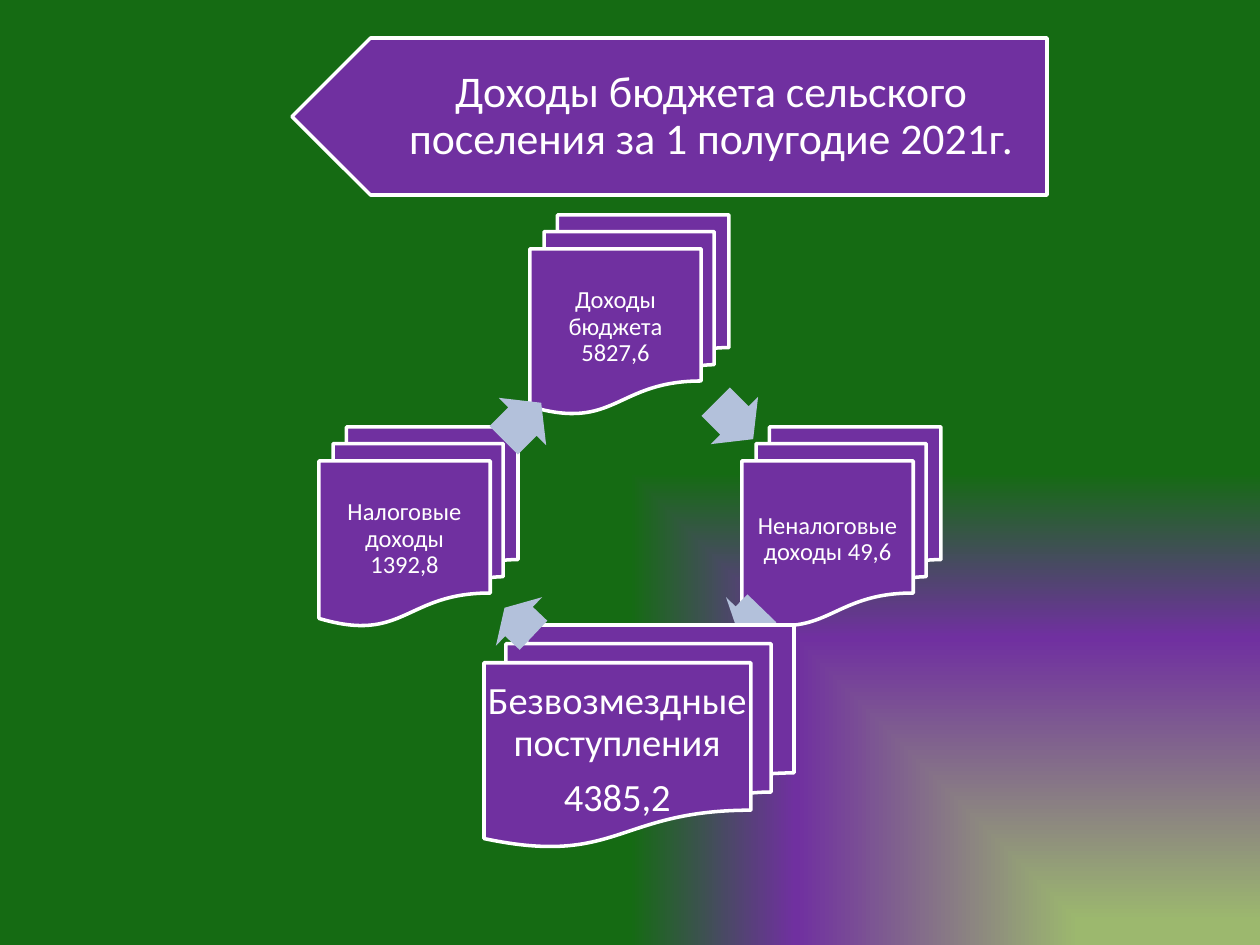
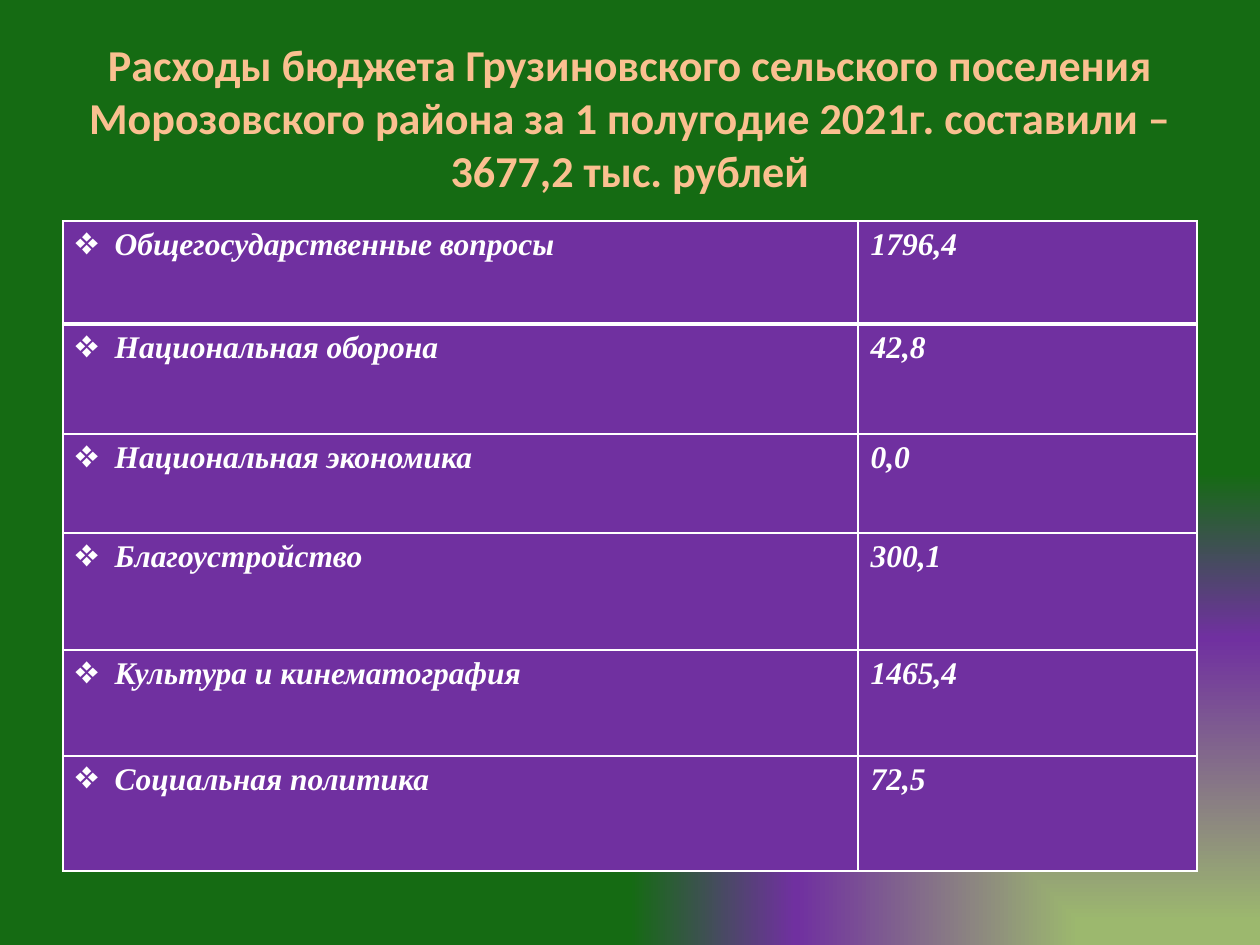
from pptx import Presentation
from pptx import util as u
from pptx.dml.color import RGBColor
from pptx.enum import shapes, text
from pptx.oxml import ns, parse_xml

PX = 914400 / 126
PURPLE, GREEN, LIME = "7030A0", "156B13", "9CB86E"
WHITE, PEACH, PALE_BLUE = "FFFFFF", "FAC090", "B3C1DB"
BACKGROUND_STOPS = [(5, LIME), (65, PURPLE), (100, GREEN)]

BANNER_TEXT = "Доходы бюджета сельского поселения за 1 полугодие 2021г."
BANNER = (292, 38, 755, 157)
BANNER_TEXT_BOX = (331, 38, 715, 157)

# Each card is followed by the arrow that leads to the next one.
INCOME_CYCLE = [
    {"lines": ["Доходы бюджета\v5827,6"], "size": 14,
     "card": (530, 215, 199, 199), "arrow": (708, 387, 53, 67), "turn": 45},
    {"lines": ["Неналоговые доходы 49,6"], "size": 14,
     "card": (742, 427, 199, 199), "arrow": (733, 587, 34, 67), "turn": 134.1},
    {"lines": ["Безвозмездные\vпоступления", "4385,2"], "size": 22,
     "card": (484, 625, 310, 222), "arrow": (499, 588, 40, 67), "turn": 223.5},
    {"lines": ["Налоговые доходы\v1392,8"], "size": 14,
     "card": (319, 427, 199, 199), "arrow": (496, 388, 53, 67), "turn": 315},
]
CARD_INSETS = (1, 3, 1, 3)

EXPENSES_TITLE = ("Расходы бюджета Грузиновского сельского поселения Морозовского "
                  "района за 1 полугодие 2021г. составили – 3677,2 тыс. рублей")
EXPENSES = [
    ("Общегосударственные вопросы", "1796,4"),
    ("Национальная оборона", "42,8"),
    ("Национальная экономика", "0,0"),
    ("Благоустройство", "300,1"),
    ("Культура и кинематография", "1465,4"),
    ("Социальная политика", "72,5"),
]
COLUMN_WIDTHS = [795, 339]
ROW_HEIGHTS = [103, 110, 99, 117, 106, 115]
TITLE_BOX = (63, 38, 1134, 157)
TABLE_CORNER = (63, 221)


def px(*lengths):
    return [u.Emu(round(length * PX)) for length in lengths]


def color(hex_code):
    return RGBColor.from_string(hex_code)


def set_font(paragraph, hex_code, **formats):
    for name, value in formats.items():
        setattr(paragraph.font, name, value)
    paragraph.font.color.rgb = color(hex_code)


def set_background(master):
    """Give every slide a gradient that spreads from the lower right corner."""
    master.background.fill.solid()
    properties = master.element.find(".//" + ns.qn("p:bgPr"))
    stops = "".join(f'<a:gs pos="{position * 1000}"><a:srgbClr val="{hex_code}"/></a:gs>'
                    for position, hex_code in BACKGROUND_STOPS)
    gradient = parse_xml(
        f'<a:gradFill {ns.nsdecls("a")} rotWithShape="1"><a:gsLst>{stops}</a:gsLst>'
        '<a:path path="rect"><a:fillToRect l="100000" t="100000"/></a:path></a:gradFill>')
    properties.replace(properties.find(ns.qn("a:solidFill")), gradient)


def add_block(slide, preset, box, fill, outlined=True, turn=0):
    shape = slide.shapes.add_shape(preset, *px(*box))
    shape.shadow.inherit = False
    shape.rotation = turn
    shape.fill.solid()
    shape.fill.fore_color.rgb = color(fill)
    if outlined:
        shape.line.color.rgb = color(WHITE)
        shape.line.width = u.Pt(2)
    else:
        shape.line.fill.background()
    return shape


def add_label(slide, box, lines, size, insets):
    frame = slide.shapes.add_textbox(*px(*box)).text_frame
    frame.word_wrap = True
    frame.vertical_anchor = text.MSO_ANCHOR.MIDDLE
    for side, inset in zip(("left", "top", "right", "bottom"), px(*insets)):
        setattr(frame, f"margin_{side}", inset)
    for index, line in enumerate(lines):
        paragraph = frame.add_paragraph() if index else frame.paragraphs[0]
        paragraph.text = line
        paragraph.alignment = text.PP_ALIGN.CENTER
        paragraph.line_spacing = 0.9
        paragraph.space_after = u.Pt(0.35 * size)
        set_font(paragraph, WHITE, name="Calibri", size=u.Pt(size))


def add_card(slide, box, lines, size):
    """Add a stack of sheets with its text on the front sheet."""
    add_block(slide, shapes.MSO_SHAPE.FLOWCHART_MULTIDOCUMENT, box, PURPLE)
    left, top, width, height = box
    front = (left, top + 0.17 * height, 0.86 * width, 0.79 * height)
    add_label(slide, front, lines, size, CARD_INSETS)


def add_income_slide(presentation):
    slide = presentation.slides.add_slide(presentation.slide_layouts.get_by_name("Blank"))
    add_block(slide, shapes.MSO_SHAPE.PENTAGON, BANNER, PURPLE, turn=180)
    add_label(slide, BANNER_TEXT_BOX, [BANNER_TEXT], 25, (69, 13, 24, 13))
    for step in INCOME_CYCLE:
        add_card(slide, step["card"], step["lines"], step["size"])
        arrow = add_block(slide, shapes.MSO_SHAPE.RIGHT_ARROW, step["arrow"], PALE_BLUE,
                          outlined=False, turn=step["turn"])
        arrow.adjustments[0] = 0.6


def set_borders(cell, **widths):
    properties = cell._tc.get_or_add_tcPr()
    for side in "LRTB":
        properties.append(parse_xml(
            f'<a:ln{side} {ns.nsdecls("a")} w="{u.Pt(widths.get(side, 1))}">'
            f'<a:solidFill><a:srgbClr val="{WHITE}"/></a:solidFill></a:ln{side}>'))


def add_bullet(paragraph):
    properties = paragraph._p.get_or_add_pPr()
    indent = px(39)[0]
    properties.set("marL", str(indent))
    properties.set("indent", str(-indent))
    for bullet_part in ('buSzPct {} val="125000"', 'buChar {} char="❖"'):
        properties.append(parse_xml(f'<a:{bullet_part.format(ns.nsdecls("a"))}/>'))


def add_expenses_table(slide):
    frame = slide.shapes.add_table(
        len(EXPENSES), len(COLUMN_WIDTHS),
        *px(*TABLE_CORNER, sum(COLUMN_WIDTHS), sum(ROW_HEIGHTS)))
    table = frame.table
    for column, width in zip(table.columns, px(*COLUMN_WIDTHS)):
        column.width = width
    for row, height in zip(table.rows, px(*ROW_HEIGHTS)):
        row.height = height
    for row_index, values in enumerate(EXPENSES):
        for column_index, value in enumerate(values):
            cell = table.cell(row_index, column_index)
            cell.text = value
            set_borders(cell, T=3 if row_index == 1 else 1, B=3 if row_index == 0 else 1)
            cell.fill.solid()
            cell.fill.fore_color.rgb = color(PURPLE)
            paragraph = cell.text_frame.paragraphs[0]
            set_font(paragraph, WHITE, name="Times New Roman", size=u.Pt(18),
                     bold=True, italic=True)
            if column_index == 0:
                add_bullet(paragraph)


def add_expenses_slide(presentation):
    slide = presentation.slides.add_slide(presentation.slide_layouts.get_by_name("Title Only"))
    title = slide.shapes.title
    title.left, title.top, title.width, title.height = px(*TITLE_BOX)
    title.text = EXPENSES_TITLE
    title.text_frame.auto_size = text.MSO_AUTO_SIZE.NONE
    title.text_frame.vertical_anchor = text.MSO_ANCHOR.MIDDLE
    paragraph = title.text_frame.paragraphs[0]
    paragraph.alignment = text.PP_ALIGN.CENTER
    set_font(paragraph, PEACH, name="Calibri", size=u.Pt(25.2), bold=True)
    add_expenses_table(slide)


def main():
    presentation = Presentation()
    presentation.slide_width, presentation.slide_height = px(1260, 945)
    set_background(presentation.slide_master)
    add_income_slide(presentation)
    add_expenses_slide(presentation)
    presentation.save("out.pptx")


if __name__ == "__main__":
    main()
